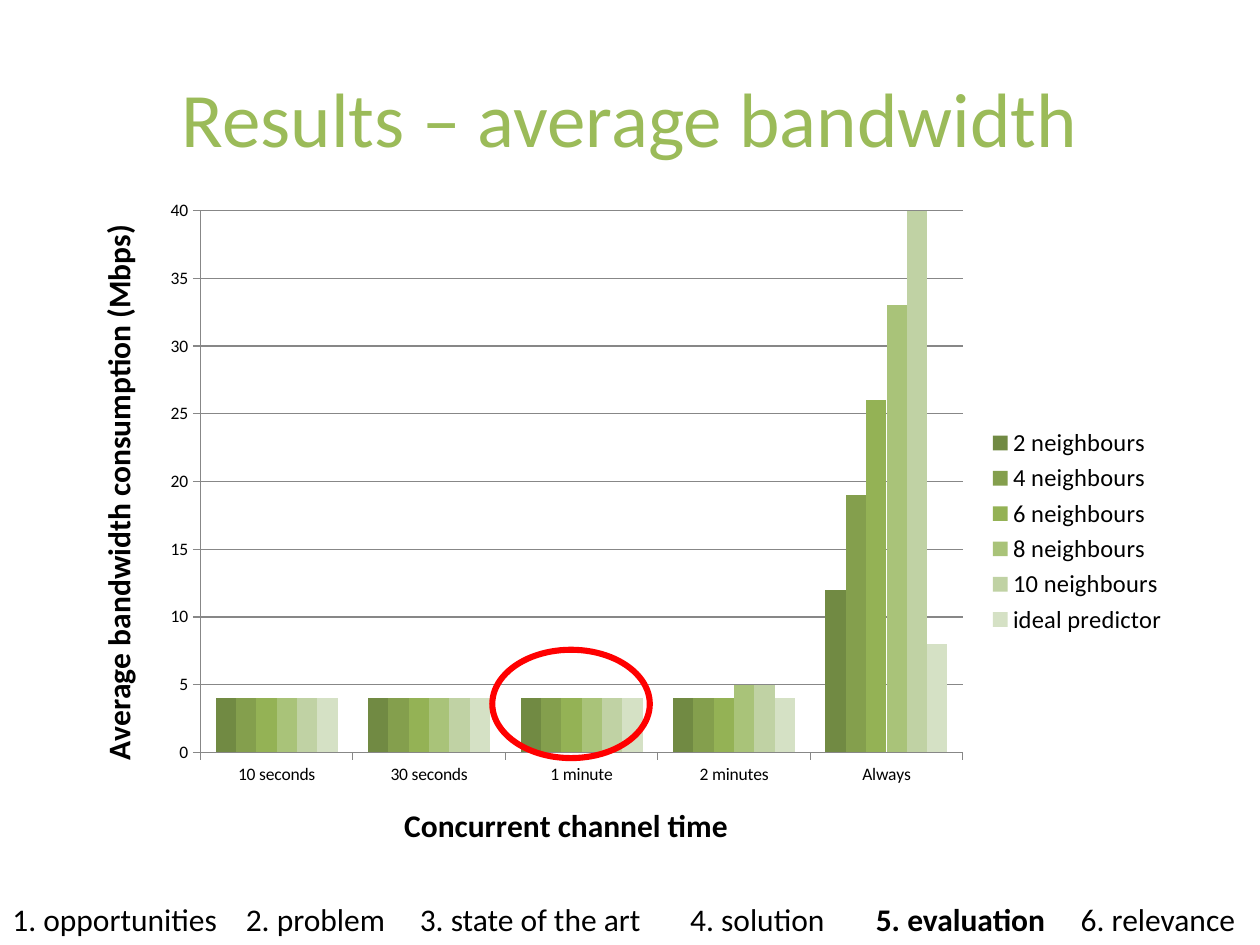
from dataclasses import dataclass

from lxml import etree
from pptx import Presentation
from pptx import util as u
from pptx.chart.data import CategoryChartData
from pptx.dml.color import RGBColor
from pptx.enum import chart as charts, shapes, text
from pptx.oxml import ns

FONT = "Calibri"
BLACK = RGBColor(0x00, 0x00, 0x00)
GREEN = RGBColor(0x9B, 0xBB, 0x59)
GREY = RGBColor(0x87, 0x87, 0x87)
RED = RGBColor(0xFF, 0x00, 0x00)
CHART_WIDTH, CHART_HEIGHT = 635, 393.8


@dataclass(frozen=True)
class Series:
    name: str
    values: tuple[int, ...]
    color: RGBColor


@dataclass(frozen=True)
class Section:
    label: str
    tab: float  # distance from the text edge, in points
    current: bool = False


CATEGORIES = ("10 seconds", "30 seconds", "1 minute", "2 minutes", "Always")
SERIES = (
    Series("2 neighbours", (4, 4, 4, 4, 12), RGBColor(0x71, 0x8A, 0x43)),
    Series("4 neighbours", (4, 4, 4, 4, 19), RGBColor(0x84, 0x9F, 0x4D)),
    Series("6 neighbours", (4, 4, 4, 4, 26), RGBColor(0x94, 0xB2, 0x55)),
    Series("8 neighbours", (4, 4, 4, 5, 33), RGBColor(0xA9, 0xC3, 0x79)),
    Series("10 neighbours", (4, 4, 4, 5, 40), RGBColor(0xC0, 0xD2, 0xA4)),
    Series("ideal predictor", (4, 4, 4, 4, 8), RGBColor(0xD5, 0xE1, 0xC5)),
)
SECTIONS = (
    Section("1. opportunities", 0),
    Section("2. problem", 133.4),
    Section("3. state of the art", 232.8),
    Section("4. solution", 387.3),
    Section("5. evaluation", 493.4, current=True),
    Section("6. relevance", 610.5),
)


def style(font, size: float, color: RGBColor = BLACK, bold: bool = False) -> None:
    font.name, font.size, font.bold = FONT, u.Pt(size), bold
    font.color.rgb = color


def add_box(page, left: float, top: float, width: float, height: float):
    """Add a wrapping text box and return its frame."""
    box = page.shapes.add_textbox(u.Pt(left), u.Pt(top), u.Pt(width), u.Pt(height))
    box.text_frame.word_wrap = True
    return box.text_frame


def add_span(para, words: str, size: float, color: RGBColor = BLACK, bold: bool = False) -> None:
    span = para.add_run()
    span.text = words
    style(span.font, size, color, bold)


def place(part, before: tuple[str, ...], **points: float) -> None:
    """Give a chart part a fixed place, in points from the chart's corner."""
    for old in part.findall(ns.qn("c:layout")):
        part.remove(old)
    layout = etree.Element(ns.qn("c:layout"))
    manual = etree.SubElement(layout, ns.qn("c:manualLayout"))
    if part.tag == ns.qn("c:plotArea"):
        etree.SubElement(manual, ns.qn("c:layoutTarget")).set("val", "inner")
    for mode in ("xMode", "yMode"):
        etree.SubElement(manual, ns.qn(f"c:{mode}")).set("val", "edge")
    for key, value in points.items():
        whole = CHART_WIDTH if key in "xw" else CHART_HEIGHT
        etree.SubElement(manual, ns.qn(f"c:{key}")).set("val", f"{value / whole:.5f}")
    follower = next(child for child in part if child.tag in [ns.qn(tag) for tag in before])
    follower.addprevious(layout)


def style_axis(axis, title: str, x: float, y: float) -> None:
    axis.major_tick_mark = charts.XL_TICK_MARK.OUTSIDE
    axis.minor_tick_mark = charts.XL_TICK_MARK.NONE
    axis.format.line.color.rgb = GREY
    axis.format.line.width = u.Pt(0.75)
    style(axis.tick_labels.font, 10)
    add_span(axis.axis_title.text_frame.paragraphs[0], title, 18, bold=True)
    place(axis.axis_title._element, ("c:overlay", "c:spPr"), x=x, y=y)


def add_bandwidth_chart(page) -> None:
    data = CategoryChartData(number_format="0")
    data.categories = CATEGORIES
    for item in SERIES:
        data.add_series(item.name, item.values)
    chart = page.shapes.add_chart(
        charts.XL_CHART_TYPE.COLUMN_CLUSTERED,
        u.Pt(39.6), u.Pt(106.6), u.Pt(CHART_WIDTH), u.Pt(CHART_HEIGHT), data,
    ).chart
    style(chart.font, 10)
    chart.has_title = False

    # Columns
    plot = chart.plots[0]
    plot.gap_width, plot.overlap, plot.vary_by_categories = 150, 0, False
    for drawn, item in zip(plot.series, SERIES):
        drawn.format.fill.solid()
        drawn.format.fill.fore_color.rgb = item.color
        drawn.invert_if_negative = False
    area = chart._chartSpace.chart.plotArea
    place(area, ("c:barChart",), x=74.9, y=13.8, w=435.7, h=309.6)

    # Axes
    style_axis(chart.category_axis, "Concurrent channel time", 188.2, 349.3)
    values = chart.value_axis
    style_axis(values, "Average bandwidth consumption (Mbps)", 12.2, 18.7)
    values.minimum_scale, values.maximum_scale, values.major_unit = 0, 40, 5
    values.tick_labels.number_format = "0"
    values.tick_labels.number_format_is_linked = False
    values.has_major_gridlines = True
    values.major_gridlines.format.line.color.rgb = GREY
    values.major_gridlines.format.line.width = u.Pt(0.75)

    # Legend
    chart.has_legend = True
    chart.legend.position = charts.XL_LEGEND_POSITION.RIGHT
    chart.legend.include_in_layout = False
    style(chart.legend.font, 14)
    place(chart.legend._element, ("c:overlay",), x=522, y=135, w=108, h=124)


def add_section_bar(page) -> None:
    para = add_box(page, 0, 510.8, 720, 28.8).paragraphs[0]
    stops = etree.SubElement(para._p.get_or_add_pPr(), ns.qn("a:tabLst"))
    for section in SECTIONS:
        if section.tab:
            stop = etree.SubElement(stops, ns.qn("a:tab"))
            stop.set("pos", str(int(u.Pt(section.tab))))
            stop.set("algn", "l")
        lead = "\t" if section.tab else ""
        add_span(para, lead + section.label, 18, bold=section.current)


def add_highlight(page) -> None:
    ring = page.shapes.add_shape(
        shapes.MSO_SHAPE.OVAL, u.Pt(281.3), u.Pt(371.3), u.Pt(90), u.Pt(61.9)
    )
    ring.shadow.inherit = False
    ring.fill.background()
    ring.line.color.rgb = RED
    ring.line.width = u.Pt(3.5)


def main() -> None:
    deck = Presentation()
    deck.slide_width, deck.slide_height = u.Pt(720), u.Pt(540)
    page = deck.slides.add_slide(deck.slide_layouts[6])

    # Title
    frame = add_box(page, 36, 21.6, 648, 90)
    frame.vertical_anchor = text.MSO_ANCHOR.MIDDLE
    frame.paragraphs[0].alignment = text.PP_ALIGN.CENTER
    add_span(frame.paragraphs[0], "Results – average bandwidth", 44, GREEN)

    add_section_bar(page)
    add_bandwidth_chart(page)
    add_highlight(page)
    deck.save("out.pptx")


if __name__ == "__main__":
    main()
